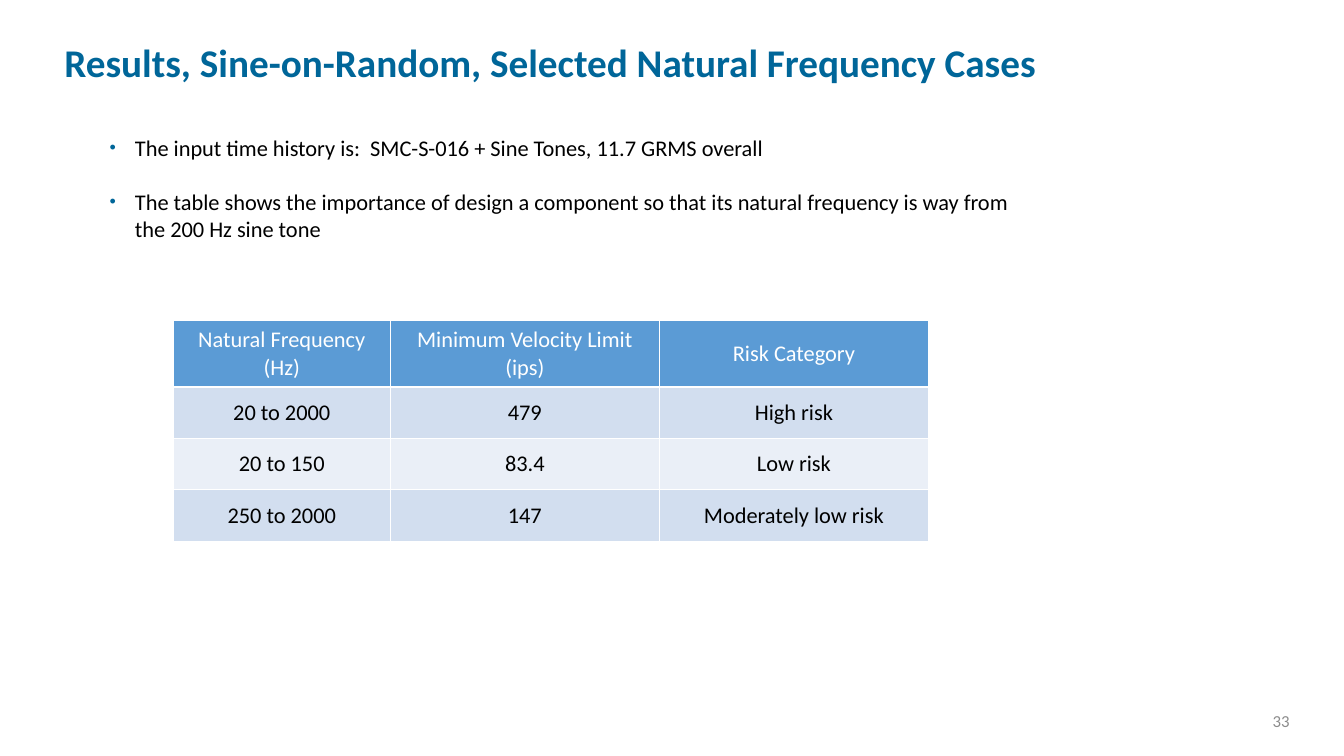
from dataclasses import dataclass

from lxml.etree import SubElement
from pptx import Presentation
from pptx.dml.color import RGBColor
from pptx.enum.text import MSO_ANCHOR as Anchor, PP_ALIGN as Align
from pptx.oxml.ns import qn
from pptx.util import Inches, Pt

TITLE = "Results, Sine-on-Random, Selected Natural Frequency Cases"
BULLETS = [
    "The input time history is:  SMC-S-016 + Sine Tones, 11.7 GRMS overall",
    "The table shows the importance of design a component so that its natural "
    "frequency is way from the 200 Hz sine tone",
]
RISK_ROWS = [
    ("Natural Frequency (Hz)", "Minimum Velocity Limit\n(ips)", "Risk Category"),
    ("20 to 2000", "479", "High risk"),
    ("20 to 150", "83.4", "Low risk"),
    ("250 to 2000", "147", "Moderately low risk"),
]
PAGE_NUMBER = "33"

SLIDE_SIZE = (13.33, 7.5)
TITLE_BOX = (0.54, 0.27, 12.25, 0.74)
BULLET_BOX = (0.99, 1.28, 9.4, 1.18)
NUMBER_BOX = (12.28, 6.95, 0.51, 0.4)
TABLE_ORIGIN = (1.72, 3.18)
COLUMN_WIDTHS = (2.15, 2.67, 2.67)
ROW_HEIGHTS = (0.66, 0.51, 0.51, 0.51)


@dataclass(frozen=True)
class Theme:
    font: str = "Calibri"
    accent: str = "006699"
    text: str = "000000"
    muted: str = "8C8C8C"
    header_text: str = "FFFFFF"
    header_fill: str = "5B9BD5"
    band_fills: tuple = ("D2DEEF", "EAEFF7")
    title_size: int = 28
    body_size: int = 16
    number_size: int = 12
    bullet_gap: float = 19.5


THEME = Theme()


def add_run(paragraph, text, size, color, bold=False):
    run = paragraph.add_run()
    run.text = text
    run.font.name = THEME.font
    run.font.size = Pt(size)
    run.font.bold = bold
    run.font.color.rgb = RGBColor.from_string(color)


def add_text_frame(slide, box, anchor):
    frame = slide.shapes.add_textbox(*map(Inches, box)).text_frame
    frame.word_wrap = True
    frame.vertical_anchor = anchor
    return frame


def next_paragraph(frame, index):
    return frame.add_paragraph() if index else frame.paragraphs[0]


def set_bullet(paragraph):
    properties = paragraph._p.get_or_add_pPr()
    properties.set("marL", str(Inches(0.25)))
    properties.set("indent", str(-Inches(0.25)))
    bullet_color = SubElement(properties, qn("a:buClr"))
    SubElement(bullet_color, qn("a:srgbClr"), val=THEME.accent)
    SubElement(properties, qn("a:buSzPct"), val="80000")
    SubElement(properties, qn("a:buFont"), typeface="Arial")
    SubElement(properties, qn("a:buChar"), char="•")


def add_title(slide):
    paragraph = add_text_frame(slide, TITLE_BOX, Anchor.MIDDLE).paragraphs[0]
    paragraph.line_spacing = 0.9
    add_run(paragraph, TITLE, THEME.title_size, THEME.accent, bold=True)


def add_bullets(slide):
    frame = add_text_frame(slide, BULLET_BOX, Anchor.TOP)
    for index, text in enumerate(BULLETS):
        paragraph = next_paragraph(frame, index)
        paragraph.space_before = Pt(THEME.bullet_gap if index else 0)
        set_bullet(paragraph)
        add_run(paragraph, text, THEME.body_size, THEME.text)


def fill_cell(cell, text, fill, color):
    cell.fill.solid()
    cell.fill.fore_color.rgb = RGBColor.from_string(fill)
    cell.vertical_anchor = Anchor.MIDDLE
    cell.margin_left = cell.margin_right = Inches(0.05)
    cell.margin_top = cell.margin_bottom = Inches(0.02)
    for index, line in enumerate(text.split("\n")):
        paragraph = next_paragraph(cell.text_frame, index)
        paragraph.alignment = Align.CENTER
        add_run(paragraph, line, THEME.body_size, color)


def add_risk_table(slide):
    box = (*TABLE_ORIGIN, sum(COLUMN_WIDTHS), sum(ROW_HEIGHTS))
    table = slide.shapes.add_table(
        len(ROW_HEIGHTS), len(COLUMN_WIDTHS), *map(Inches, box)
    ).table
    for column, width in zip(table.columns, COLUMN_WIDTHS):
        column.width = Inches(width)
    for index, (row, height, texts) in enumerate(zip(table.rows, ROW_HEIGHTS, RISK_ROWS)):
        row.height = Inches(height)
        fill = THEME.band_fills[(index - 1) % 2] if index else THEME.header_fill
        color = THEME.text if index else THEME.header_text
        for cell, text in zip(row.cells, texts):
            fill_cell(cell, text, fill, color)


def add_page_number(slide):
    frame = add_text_frame(slide, NUMBER_BOX, Anchor.MIDDLE)
    frame.margin_left = frame.margin_right = 0
    frame.margin_top = frame.margin_bottom = 0
    paragraph = frame.paragraphs[0]
    paragraph.alignment = Align.RIGHT
    add_run(paragraph, PAGE_NUMBER, THEME.number_size, THEME.muted)


def main():
    presentation = Presentation()
    presentation.slide_width, presentation.slide_height = map(Inches, SLIDE_SIZE)
    slide = presentation.slides.add_slide(presentation.slide_layouts[6])
    add_title(slide)
    add_page_number(slide)
    add_risk_table(slide)
    add_bullets(slide)
    presentation.save("out.pptx")


if __name__ == "__main__":
    main()
